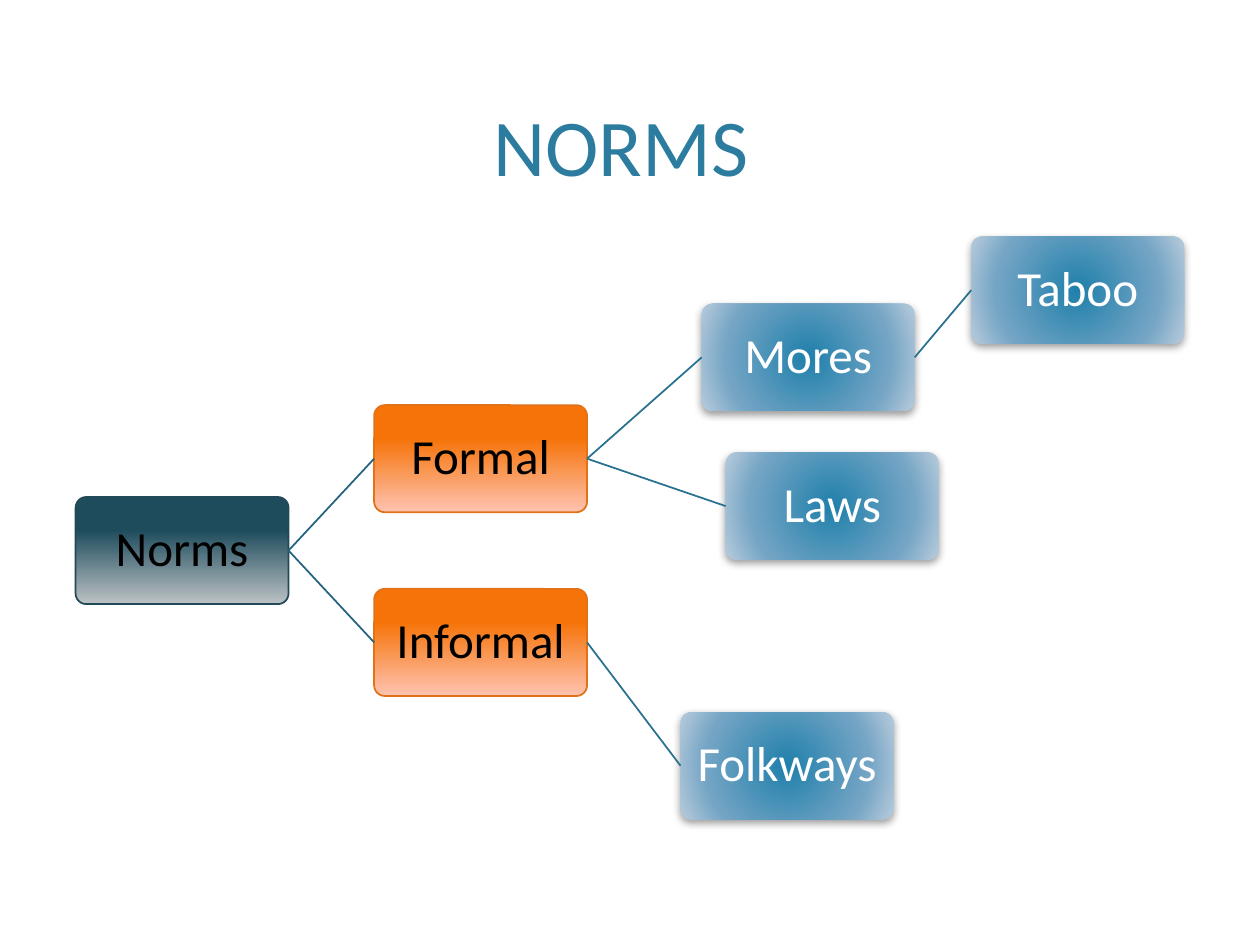
from typing import NamedTuple, Optional

from lxml import etree
from pptx import Presentation
from pptx import util as u
from pptx.dml import color
from pptx.enum import shapes, text
from pptx.oxml import ns

WIDE, HIGH = 121.7, 61.2
FONT = "Calibri"


class Look(NamedTuple):
    stops: tuple
    ink: str
    edge: Optional[str] = None


class Node(NamedTuple):
    name: str
    left: float
    top: float
    look: Look


class Link(NamedTuple):
    start: str
    end: str
    hue: str


ROOT = Look(((31, "1F4C5D"), (100, "BCC2C5")), "000000", "224957")
KIND = Look(((31, "F67309"), (100, "FEC3B0")), "000000", "E27218")
LEAF = Look(((0, "2080AB"), (69, "75A5C5"), (100, "B8CCDC")), "FFFFFF")

NODES = [
    Node("Norms", 43.2, 284, ROOT),
    Node("Formal", 213.8, 231.5, KIND),
    Node("Informal", 213.8, 336.5, KIND),
    Node("Mores", 401, 173.6, LEAF),
    Node("Taboo", 555, 135.2, LEAF),
    Node("Laws", 414.7, 258.6, LEAF),
    Node("Folkways", 388.9, 407, LEAF),
]
LINKS = [
    Link("Norms", "Formal", "23637F"),
    Link("Norms", "Informal", "23637F"),
    Link("Formal", "Mores", "287190"),
    Link("Formal", "Laws", "287190"),
    Link("Mores", "Taboo", "287190"),
    Link("Informal", "Folkways", "287190"),
]


def paint(part, code: str) -> None:
    part.rgb = color.RGBColor.from_string(code)


def add(base, tag: str, **attrs):
    return etree.SubElement(base, ns.qn(tag), {k: str(v) for k, v in attrs.items()})


def write(frame, words: str, size: float, ink: str):
    para = frame.paragraphs[0]
    para.alignment = text.PP_ALIGN.CENTER
    run = para.add_run()
    run.text = words
    run.font.name = FONT
    run.font.size = u.Pt(size)
    paint(run.font.color, ink)
    return para


def shade(box, look: Look) -> None:
    box.fill.gradient()
    grad = box._element.spPr.find(ns.qn("a:gradFill"))
    for child in list(grad):
        grad.remove(child)
    stops = add(grad, "a:gsLst")
    for place, code in look.stops:
        stop = add(stops, "a:gs", pos=place * 1000)
        add(stop, "a:srgbClr", val=code)
    if look.edge:
        add(grad, "a:lin", ang=5400000, scaled=0)
    else:
        round_ = add(grad, "a:path", path="circle")
        add(round_, "a:fillToRect", **dict.fromkeys("ltrb", 100000))


def cast(box) -> None:
    base = box._element.spPr.find(ns.qn("a:effectLst"))
    drop = add(base, "a:outerShdw", blurRad=u.Pt(5), dist=u.Pt(2),
               dir=5400000, rotWithShape=0)
    add(add(drop, "a:srgbClr", val="000000"), "a:alpha", val=40000)


def draw_node(slide, node: Node):
    box = slide.shapes.add_shape(
        shapes.MSO_SHAPE.ROUNDED_RECTANGLE,
        u.Pt(node.left), u.Pt(node.top), u.Pt(WIDE), u.Pt(HIGH))
    box.adjustments[0] = 0.1
    box.shadow.inherit = False
    shade(box, node.look)
    if node.look.edge:
        paint(box.line.color, node.look.edge) if box.line.fill.solid() else None
        paint(box.line.color, node.look.edge)
        box.line.width = u.Pt(1)
    else:
        box.line.fill.background()
        cast(box)
    frame = box.text_frame
    frame.word_wrap = True
    frame.vertical_anchor = text.MSO_ANCHOR.MIDDLE
    frame.margin_left = frame.margin_right = u.Pt(1.4)
    frame.margin_top = frame.margin_bottom = u.Pt(1.4)
    write(frame, node.name, 28, node.look.ink).line_spacing = 0.9
    return box


def draw_link(slide, link: Link, boxes: dict) -> None:
    line = slide.shapes.add_connector(shapes.MSO_CONNECTOR.STRAIGHT, 0, 0, 0, 0)
    line.begin_connect(boxes[link.start], 3)
    line.end_connect(boxes[link.end], 1)
    paint(line.line.color, link.hue)
    line.line.width = u.Pt(1)
    add(line._element.spPr, "a:effectLst")


def draw_title(slide) -> None:
    box = slide.shapes.add_textbox(u.Pt(43.2), u.Pt(8.6), u.Pt(633.6), u.Pt(105.1))
    box.text_frame.word_wrap = True
    box.text_frame.vertical_anchor = text.MSO_ANCHOR.BOTTOM
    write(box.text_frame, "NORMS ", 46, "2C7C9F")


def main() -> None:
    deck = Presentation()
    deck.slide_width, deck.slide_height = u.Pt(720), u.Pt(540)
    slide = deck.slides.add_slide(deck.slide_layouts[6])
    draw_title(slide)
    boxes = {node.name: draw_node(slide, node) for node in NODES}
    for link in LINKS:
        draw_link(slide, link, boxes)
    deck.save("out.pptx")


if __name__ == "__main__":
    main()
